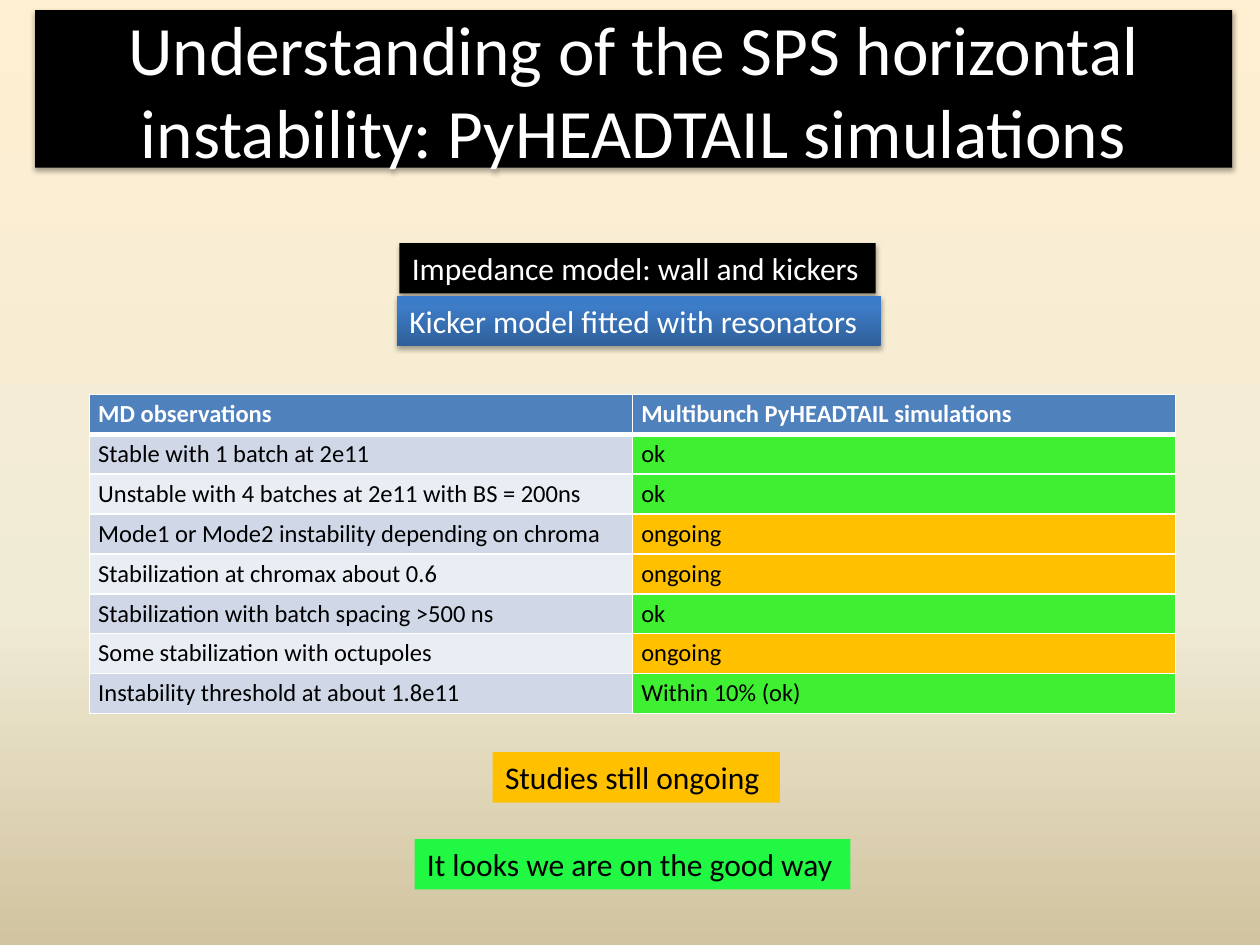
"""Build the slide on simulations of the SPS horizontal instability."""
from lxml.etree import SubElement
from pptx import Presentation
from pptx.dml.color import RGBColor
from pptx.enum.shapes import MSO_SHAPE
from pptx.enum.text import MSO_ANCHOR, MSO_AUTO_SIZE, PP_ALIGN
from pptx.oxml.ns import qn
from pptx.util import Inches, Pt

HUES = {
    "black": "000000", "white": "FFFFFF", "head": "4F81BD",
    "odd": "D0D8E8", "even": "E9EDF4", "ok": "3FEF31",
    "ongoing": "FFC000", "good": "20F844",
}
SKY = [(0, "FFEFD1"), (65, "F0EBD5"), (100, "D1C39F")]
BLUE = [(0, "2F5F99"), (80, "3D7CC7"), (100, "3A7CCB")]


def blend(fill, node, stops, angle):
    fill.gradient()
    grad = next(node.iter(qn("a:gradFill")))
    group = grad.find(qn("a:gsLst"))
    for old in list(group):
        group.remove(old)
    for spot, hue in stops:
        stop = SubElement(group, qn("a:gs"), pos=str(spot * 1000))
        SubElement(stop, qn("a:srgbClr"), val=hue)
    grad.find(qn("a:lin")).set("ang", str(angle * 60000))


def write(frame, text, hue, **extra):
    frame.text = text
    font = frame.paragraphs[0].runs[0].font
    style = {"name": "Calibri", "size": Pt(18), "bold": False} | extra
    for key, value in style.items():
        setattr(font, key, value)
    font.color.rgb = RGBColor.from_string(HUES[hue])


deck = Presentation()
deck.slide_width, deck.slide_height = Inches(10), Inches(7.5)
slide = deck.slides.add_slide(deck.slide_layouts[6])
blend(slide.background.fill, slide.element, SKY, 90)

rows = [
    ("MD observations", "Multibunch PyHEADTAIL simulations", "head"),
    ("Stable with 1 batch at 2e11", "ok", "ok"),
    ("Unstable with 4 batches at 2e11 with BS = 200ns", "ok", "ok"),
    ("Mode1 or Mode2 instability depending on chroma", "ongoing", "ongoing"),
    ("Stabilization at chromax about 0.6", "ongoing", "ongoing"),
    ("Stabilization with batch spacing >500 ns", "ok", "ok"),
    ("Some stabilization with octupoles", "ongoing", "ongoing"),
    ("Instability threshold at about 1.8e11", "Within 10% (ok)", "ok"),
]
table = slide.shapes.add_table(
    len(rows), 2, Inches(0.71), Inches(3.13), Inches(8.62), Inches(2.47)).table
pad = {
    "margin_left": Inches(0.07), "margin_right": Inches(0.07),
    "margin_top": Inches(0.04), "margin_bottom": Inches(0.04),
}
for row, (left, right, state) in enumerate(rows):
    band = "head" if row == 0 else "odd" if row % 2 else "even"
    for col, (text, fill) in enumerate([(left, band), (right, state)]):
        cell = table.cell(row, col)
        for key, value in pad.items():
            setattr(cell, key, value)
        write(cell.text_frame, text, "black" if row else "white",
              size=Pt(14), bold=row == 0)
        props = cell._tc.get_or_add_tcPr()
        for side in "LRTB":
            thick = (row, side) in [(0, "B"), (1, "T")]
            line = SubElement(props, qn(f"a:ln{side}"), w=str(Pt(3 if thick else 1)))
            paint = SubElement(line, qn("a:solidFill"))
            SubElement(paint, qn("a:srgbClr"), val=HUES["white"])
        cell.fill.solid()
        cell.fill.fore_color.rgb = RGBColor.from_string(HUES[fill])

title = "Understanding of the SPS horizontal instability: PyHEADTAIL simulations"
boxes = [
    ("Impedance model: wall and kickers", 3.17, 1.93, 3.78, 0.4, "black", "white", 18),
    ("Kicker model fitted with resonators", 3.15, 2.35, 3.84, 0.4, "blue", "white", 18),
    (title, 0.28, 0.08, 9.5, 1.25, "black", "white", 39.6),
    ("Studies still ongoing", 3.91, 5.97, 2.28, 0.4, "ongoing", "black", 18),
    ("It looks we are on the good way", 3.29, 6.66, 3.46, 0.4, "good", "black", 18),
]
for text, x, y, wide, high, fill, ink, size in boxes:
    box = slide.shapes.add_shape(
        MSO_SHAPE.RECTANGLE, Inches(x), Inches(y), Inches(wide), Inches(high))
    box.shadow.inherit = False
    box.line.fill.background()
    if fill == "blue":
        blend(box.fill, box.element, BLUE, 270)
    else:
        box.fill.solid()
        box.fill.fore_color.rgb = RGBColor.from_string(HUES[fill])
    if ink == "white":
        glow = next(box.element.iter(qn("a:effectLst")))
        shade = SubElement(
            glow, qn("a:outerShdw"), blurRad=str(Pt(3.1)), dist=str(Pt(1.8)),
            dir="5400000", rotWithShape="0")
        tint = SubElement(shade, qn("a:srgbClr"), val=HUES["black"])
        SubElement(tint, qn("a:alpha"), val="35000")
    frame = box.text_frame
    write(frame, text, ink, size=Pt(size))
    main = text == title
    form = {
        "word_wrap": True,
        "vertical_anchor": MSO_ANCHOR.MIDDLE if main else MSO_ANCHOR.TOP,
        "auto_size": MSO_AUTO_SIZE.NONE if main else MSO_AUTO_SIZE.SHAPE_TO_FIT_TEXT,
    }
    for key, value in form.items():
        setattr(frame, key, value)
    frame.paragraphs[0].alignment = PP_ALIGN.CENTER if main else PP_ALIGN.LEFT

deck.save("out.pptx")
